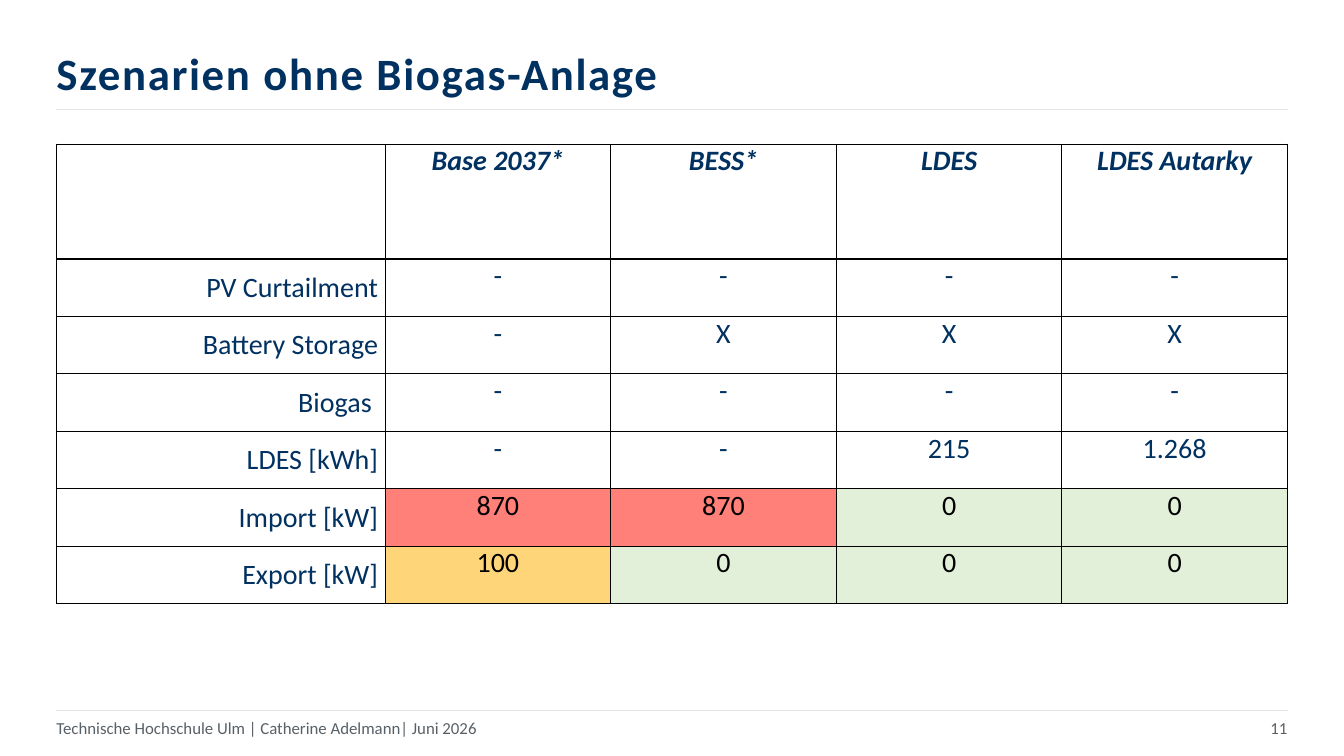
"""Build the slide comparing energy scenarios without a biogas plant."""
import dataclasses

import pptx
import pptx.dml.color
import pptx.enum.shapes
import pptx.enum.text
import pptx.oxml
import pptx.oxml.ns
import pptx.util

TITLE = "Szenarien ohne Biogas-Anlage"
FOOTER = "Technische Hochschule Ulm | Catherine Adelmann| Juni 2026"
SLIDE_NUMBER = "11"
SCENARIOS = ["", "Base 2037*", "BESS*", "LDES", "LDES Autarky"]
MEASURES = [
    ["PV Curtailment", "-", "-", "-", "-"],
    ["Battery Storage", "-", "X", "X", "X"],
    ["Biogas ", "-", "-", "-", "-"],
    ["LDES [kWh]", "-", "-", "215", "1.268"],
]
GRID_POWER = [
    ["Import [kW]", "870", "870", "0", "0"],
    ["Export [kW]", "100", "0", "0", "0"],
]


@dataclasses.dataclass(frozen=True)
class Theme:
    font: str = "Calibri"
    navy: str = "003160"
    grey: str = "586067"
    rule: str = "E2E5E8"
    black: str = "000000"
    title_size: int = 32
    table_size: int = 20
    footer_size: int = 12
    letter_spacing: int = 120
    rule_width: float = 0.5
    border_width: int = 1


THEME = Theme()
POWER_FILLS = {"870": "FF7F79", "100": "FFD579", "0": "E2EFD9"}

WIDTH, HEIGHT = 13.33, 7.5
MARGIN = 0.56
CONTENT_WIDTH = 12.21
RIGHT = MARGIN + CONTENT_WIDTH
TITLE_BOX = (MARGIN, 0.48, 11.08, 0.54)
RULES = [1.09, 7.05]
FOOTER_TOP, FOOTER_HEIGHT = 7.14, 0.17
NUMBER_WIDTH = 1.13
TABLE_TOP = 1.43
ROW_HEIGHT = 0.57
LABEL_WIDTH = 3.26
CELL_INSET = 0.07

ALIGN = pptx.enum.text.PP_ALIGN
ANCHOR = pptx.enum.text.MSO_ANCHOR


def inches(*lengths):
    return [pptx.util.Inches(length) for length in lengths]


def rgb(color):
    return pptx.dml.color.RGBColor.from_string(color)


def write(text_frame, text, size, color, align=ALIGN.LEFT, bold=False, italic=False):
    paragraph = text_frame.paragraphs[0]
    paragraph.alignment = align
    run = paragraph.add_run()
    run.text = text
    run.font.name = THEME.font
    run.font.size = pptx.util.Pt(size)
    run.font.bold = bold
    run.font.italic = italic
    run.font.color.rgb = rgb(color)
    return paragraph, run


def clear_frame(text_frame):
    text_frame.word_wrap = True
    text_frame.auto_size = pptx.enum.text.MSO_AUTO_SIZE.NONE
    text_frame.vertical_anchor = ANCHOR.MIDDLE
    text_frame.margin_left = text_frame.margin_right = 0
    text_frame.margin_top = text_frame.margin_bottom = 0


def add_title(slide):
    title = slide.shapes.title
    title.left, title.top, title.width, title.height = inches(*TITLE_BOX)
    clear_frame(title.text_frame)
    paragraph, run = write(title.text_frame, TITLE, THEME.title_size, THEME.navy, bold=True)
    paragraph.line_spacing = 0.9
    run.font._element.set("spc", str(THEME.letter_spacing))


def add_rule(slide, top):
    rule = slide.shapes.add_connector(
        pptx.enum.shapes.MSO_CONNECTOR.STRAIGHT, *inches(MARGIN, top, RIGHT, top))
    rule.line.color.rgb = rgb(THEME.rule)
    rule.line.width = pptx.util.Pt(THEME.rule_width)
    rule._element.spPr.append(pptx.oxml.parse_xml(
        f"<a:effectLst {pptx.oxml.ns.nsdecls('a')}/>"))


def add_footer(slide, text, left, width, align):
    box = slide.shapes.add_textbox(*inches(left, FOOTER_TOP, width, FOOTER_HEIGHT))
    clear_frame(box.text_frame)
    write(box.text_frame, text, THEME.footer_size, THEME.grey, align)


def add_borders(cell):
    properties = cell._tc.get_or_add_tcPr()
    width = pptx.util.Pt(THEME.border_width)
    for side in "LRTB":
        properties.append(pptx.oxml.parse_xml(
            f'<a:ln{side} {pptx.oxml.ns.nsdecls("a")} w="{width}"><a:solidFill>'
            f'<a:srgbClr val="{THEME.black}"/></a:solidFill></a:ln{side}>'))


def format_cell(cell, text, is_header, is_label, is_power):
    add_borders(cell)
    cell.margin_left = cell.margin_right = pptx.util.Inches(CELL_INSET)
    cell.margin_top = cell.margin_bottom = 0
    cell.vertical_anchor = ANCHOR.MIDDLE if is_label else ANCHOR.TOP
    if is_power and not is_label:
        cell.fill.solid()
        cell.fill.fore_color.rgb = rgb(POWER_FILLS[text])
        color = THEME.black
    else:
        cell.fill.background()
        color = THEME.navy
    if text:
        align = ALIGN.RIGHT if is_label else ALIGN.CENTER
        write(cell.text_frame, text, THEME.table_size, color, align, is_header, is_header)


def add_scenario_table(slide):
    rows = [SCENARIOS] + MEASURES + GRID_POWER
    heights = [2 * ROW_HEIGHT] + [ROW_HEIGHT] * (len(rows) - 1)
    scenario_count = len(SCENARIOS) - 1
    scenario_width = (CONTENT_WIDTH - LABEL_WIDTH) / scenario_count
    widths = [LABEL_WIDTH] + [scenario_width] * scenario_count
    table = slide.shapes.add_table(
        len(rows), len(widths),
        *inches(MARGIN, TABLE_TOP, CONTENT_WIDTH, sum(heights))).table
    table.first_row = table.horz_banding = False
    for column, width in zip(table.columns, widths):
        column.width = pptx.util.Inches(width)
    for row_index, (row, height) in enumerate(zip(rows, heights)):
        table.rows[row_index].height = pptx.util.Inches(height)
        for column_index, text in enumerate(row):
            format_cell(table.cell(row_index, column_index), text,
                        row_index == 0, column_index == 0, row in GRID_POWER)


def main():
    presentation = pptx.Presentation()
    presentation.slide_width, presentation.slide_height = inches(WIDTH, HEIGHT)
    slide = presentation.slides.add_slide(presentation.slide_layouts[5])
    add_title(slide)
    for top in RULES:
        add_rule(slide, top)
    add_scenario_table(slide)
    add_footer(slide, FOOTER, MARGIN, CONTENT_WIDTH - NUMBER_WIDTH, ALIGN.LEFT)
    add_footer(slide, SLIDE_NUMBER, RIGHT - NUMBER_WIDTH, NUMBER_WIDTH, ALIGN.RIGHT)
    presentation.save("out.pptx")


if __name__ == "__main__":
    main()
